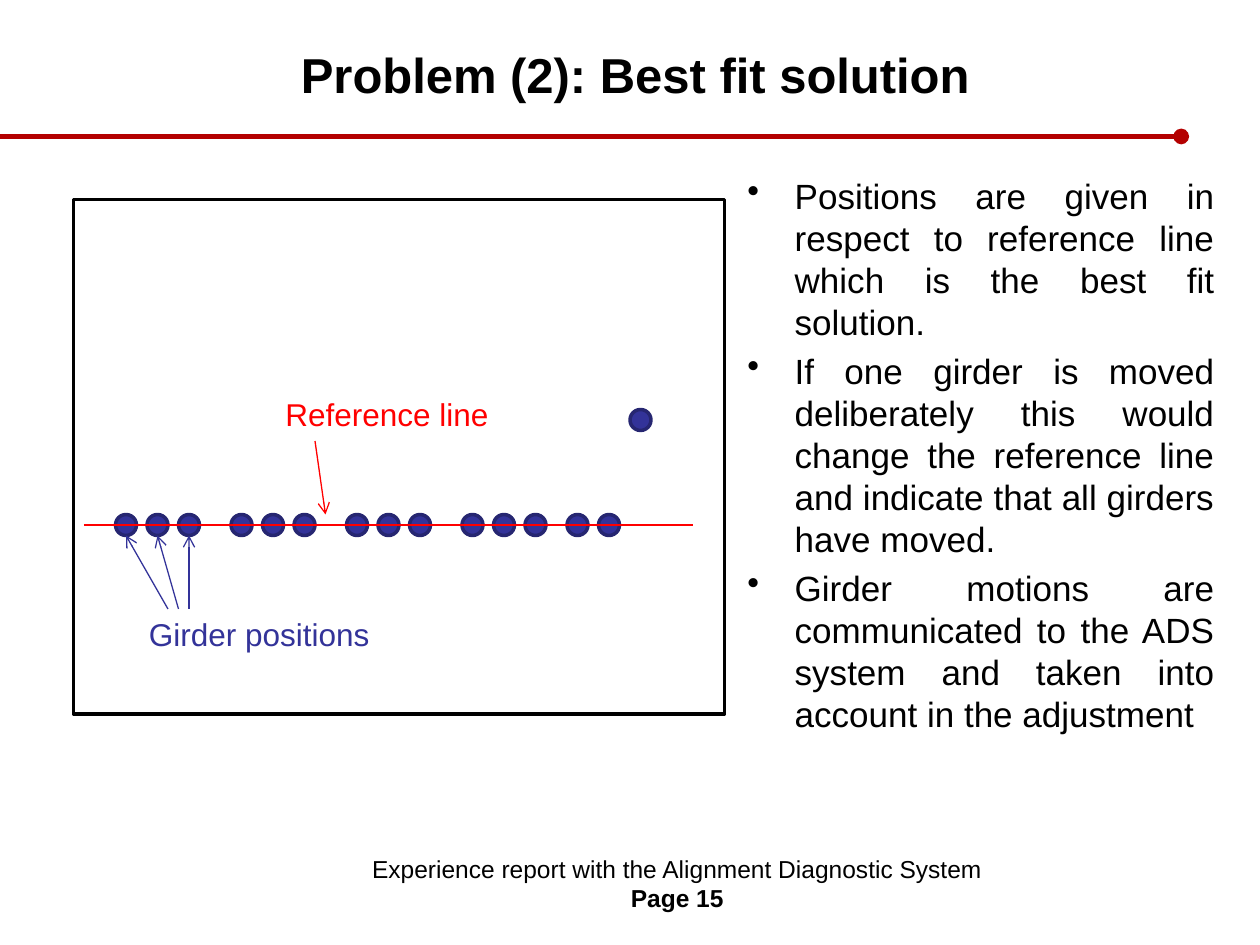
from dataclasses import dataclass
from lxml import etree
from pptx import Presentation
from pptx.dml.color import RGBColor as Rgb
from pptx.enum import shapes, text
from pptx.oxml import ns
from pptx.util import Pt


@dataclass(frozen=True)
class Theme:
    font: str = "Arial"
    black: Rgb = Rgb(0, 0, 0)
    red: Rgb = Rgb(0xFF, 0, 0)
    rule: Rgb = Rgb(0xB4, 0, 0)
    blue: Rgb = Rgb(0x33, 0x33, 0x99)
    edge: Rgb = Rgb(0x26, 0x26, 0x71)
    title: int = 28
    body: int = 20
    label: int = 18
    foot: int = 14


theme = Theme()
align = text.PP_ALIGN
kind = shapes.MSO_SHAPE

deck = Presentation()
deck.slide_width, deck.slide_height = Pt(720), Pt(540)
slide = deck.slides.add_slide(deck.slide_layouts[6])


def add_text(area, lines, size, color=theme.black, side=align.LEFT, mark=None):
    """Add a text box; lines are (words, bold) pairs, mark is a bullet."""
    box = slide.shapes.add_textbox(*map(Pt, area))
    frame = box.text_frame
    frame.word_wrap = True
    for i, (words, bold) in enumerate(lines):
        para = frame.paragraphs[0] if i == 0 else frame.add_paragraph()
        para.alignment = side
        if mark:
            props = para._p.get_or_add_pPr()
            props.set("marL", str(Pt(27)))
            props.set("indent", str(Pt(-27)))
            etree.SubElement(props, ns.qn("a:buChar")).set("char", mark)
            if i:
                para.space_before = Pt(4)
        run = para.add_run()
        run.text = words
        font = run.font
        font.name, font.size, font.bold = theme.font, Pt(size), bold
        font.color.rgb = color
    return frame


def add_line(start, end, color, width=0.75, tail=None):
    """Add a straight line; tail is the mark at its end."""
    line = slide.shapes.add_connector(
        shapes.MSO_CONNECTOR.STRAIGHT, *map(Pt, start + end))
    line.line.color.rgb = color
    line.line.width = Pt(width)
    if tail:
        stroke = line.line._get_or_add_ln()
        etree.SubElement(stroke, ns.qn("a:tailEnd")).set("type", tail)
    etree.SubElement(line._element.spPr, ns.qn("a:effectLst"))


# Heading, bullets and footer
add_line((0, 78), (675, 78), theme.rule, 3, "oval")
points = [
    "Positions are given in respect to reference line which is the best fit "
    "solution.",
    "If one girder is moved deliberately this would change the reference line "
    "and indicate that all girders have moved.",
    "Girder motions are communicated to the ADS system and taken into account "
    "in the adjustment",
]
add_text((420, 96, 281, 356), [(point, False) for point in points],
         theme.body, side=align.JUSTIFY, mark="•")
head = add_text((24, 12, 678, 60), [("Problem (2): Best fit solution", True)],
                theme.title, side=align.CENTER)
head.vertical_anchor = text.MSO_ANCHOR.MIDDLE
add_text((162, 484.5, 450, 37.5),
         [("Experience report with the Alignment Diagnostic System", False),
          ("Page 15", True)], theme.foot, side=align.CENTER)

# Diagram frame
panel = slide.shapes.add_shape(kind.RECTANGLE, Pt(42), Pt(114), Pt(372), Pt(294))
panel.shadow.inherit = False
panel.fill.background()
panel.line.color.rgb = theme.black
panel.line.width = Pt(2)

# Girders in groups, 18 pt apart; the last one is moved off the line
groups = [(66, 3), (132, 3), (198, 3), (264, 3), (324, 2)]
spots = [(left + 18 * i, 294) for left, count in groups for i in range(count)]
for x, y in spots + [(360, 234)]:
    dot = slide.shapes.add_shape(kind.OVAL, Pt(x), Pt(y), Pt(12), Pt(12))
    dot.shadow.inherit = False
    dot.fill.solid()
    dot.fill.fore_color.rgb = theme.blue
    dot.line.color.rgb = theme.edge
    dot.line.width = Pt(2)

# Reference line, labels and their arrows
add_line((48, 300), (396, 300), theme.red)
add_text((78, 348, 142, 29), [("Girder positions", False)], theme.label, theme.blue)
add_text((156, 222, 132, 29), [("Reference line", False)], theme.label, theme.red)
for i in range(3):
    add_line((96 + 6 * i, 348), (72 + 18 * i, 306), theme.blue, tail="arrow")
add_line((180, 252), (186, 294), theme.red, tail="arrow")

deck.save("out.pptx")
